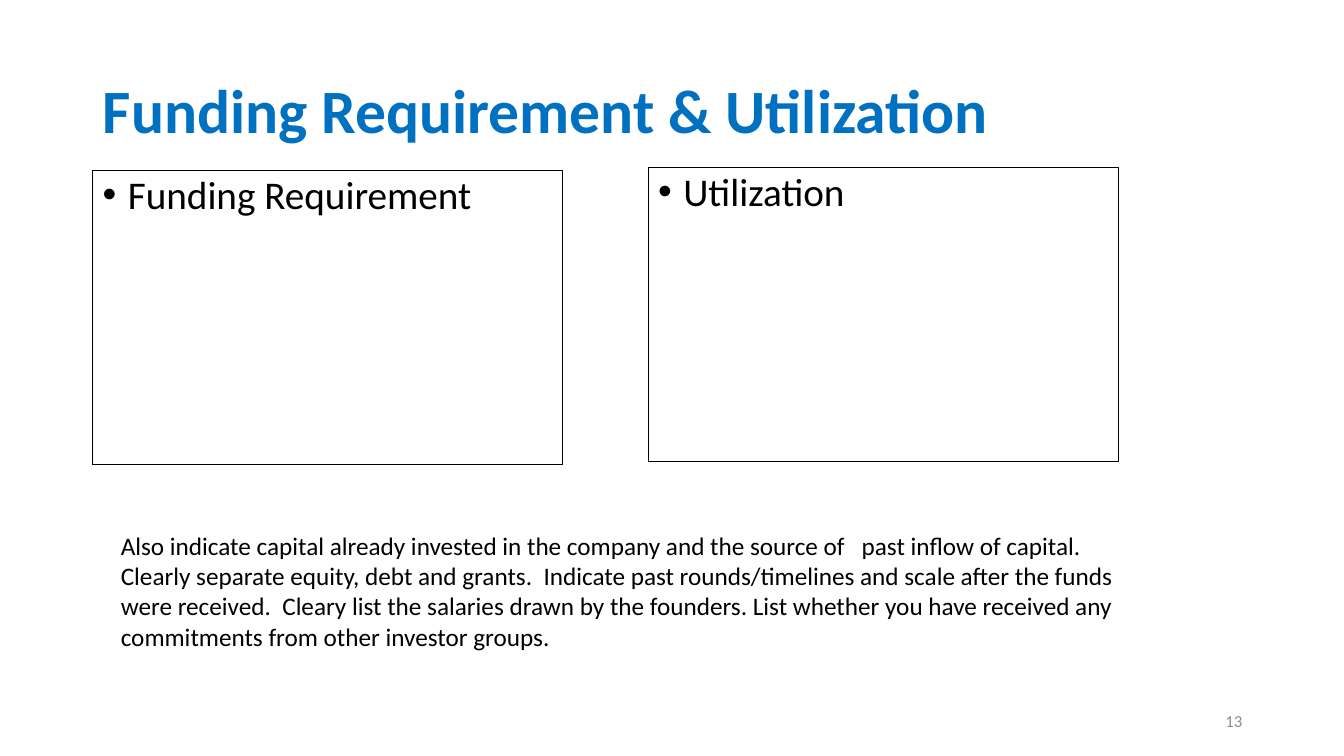
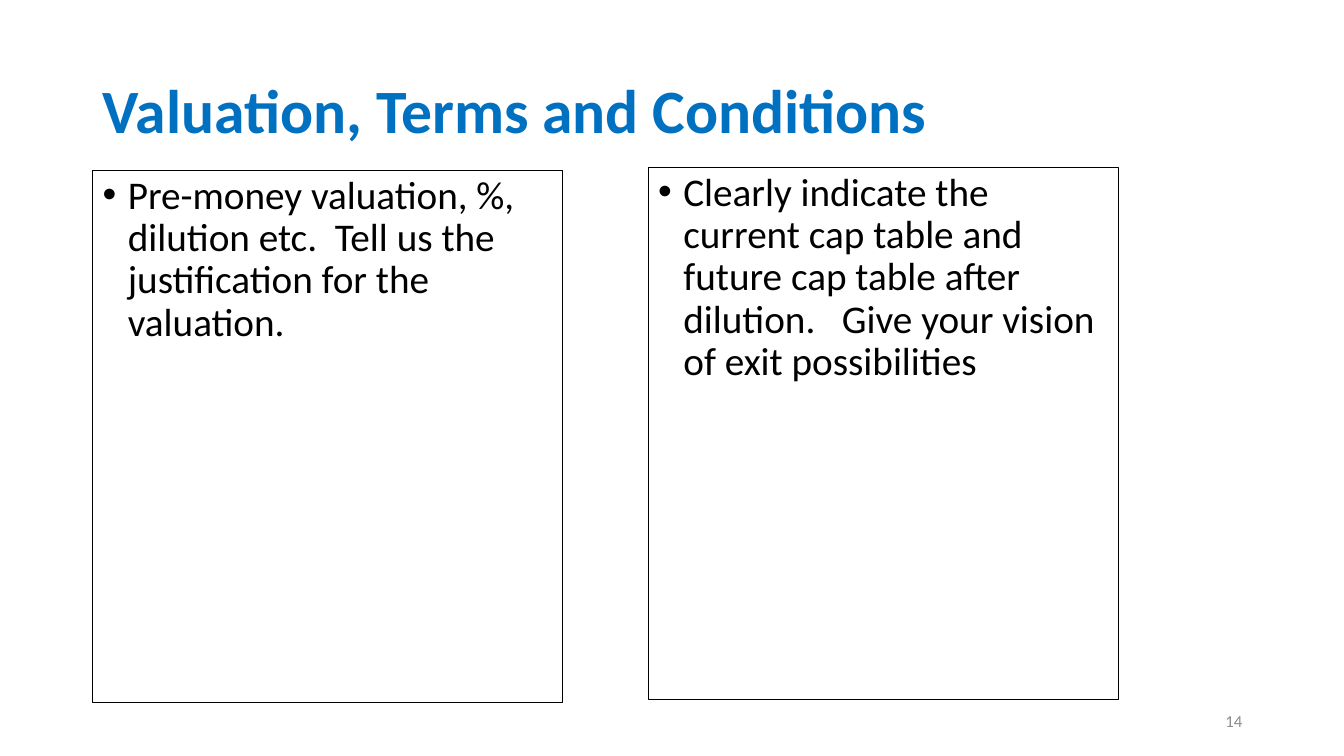
from pptx import Presentation
from pptx import util as u
from pptx.dml.color import RGBColor
from pptx.enum import shapes, text
from pptx.oxml.ns import qn

BLUE = RGBColor(0x00, 0x70, 0xC0)
BLACK = RGBColor(0x00, 0x00, 0x00)
GRAY = RGBColor(0x8C, 0x8C, 0x8C)
FONT = "Calibri"
W, H = 13.33, 7.5
MARGIN = 0.92
PANEL_W = 4.66
PANELS = ((MARGIN, 1.69), (6.43, 1.66))  # left and top of each panel
TITLE_ONLY = 5

CONTENT = (
    dict(number=13, title="Funding Requirement & Utilization", panel_h=2.92,
         panels=("Funding Requirement", "Utilization"),
         note="Also indicate capital already invested in the company and the source of   past "
              "inflow of capital.  Clearly separate equity, debt and grants.  Indicate past "
              "rounds/timelines and scale after the funds were received.  Cleary list the "
              "salaries drawn by the founders. List whether you have received any commitments "
              "from other investor groups."),
    dict(number=14, title="Valuation, Terms and Conditions", panel_h=5.28,
         panels=("Pre-money valuation, %, dilution etc.  Tell us the justification for the "
                 "valuation.",
                 "Clearly indicate the current cap table and future cap table after dilution.   "
                 "Give your vision of exit possibilities")),
)


def box(*lengths):
    return [u.Inches(n) for n in lengths]


def write(sp, words, size, color=BLACK, bold=False, align=text.PP_ALIGN.LEFT,
          anchor=text.MSO_ANCHOR.TOP, spacing=None, before=None):
    """Fill a shape with one formatted paragraph and return the paragraph."""
    tf = sp.text_frame
    tf.word_wrap = True
    tf.auto_size = text.MSO_AUTO_SIZE.NONE
    tf.vertical_anchor = anchor
    p = tf.paragraphs[0]
    p.alignment, p.line_spacing = align, spacing
    if before is not None:
        p.space_before = u.Pt(before)
    r = p.add_run()
    r.text = words
    r.font.name, r.font.size, r.font.bold = FONT, u.Pt(size), bold
    r.font.color.rgb = color
    return p


def add_bullet(p, indent=0.25):
    pPr = p._p.get_or_add_pPr()
    pPr.set("marL", str(u.Inches(indent)))
    pPr.set("indent", str(-u.Inches(indent)))
    pPr.append(pPr.makeelement(qn("a:buFont"), {"typeface": "Arial"}))
    pPr.append(pPr.makeelement(qn("a:buChar"), {"char": "•"}))


def add_title(s, words):
    sp = s.shapes.title
    sp.left, sp.top, sp.width, sp.height = box(MARGIN, 0.4, 11.5, 1.45)
    write(sp, words, 44, BLUE, bold=True, anchor=text.MSO_ANCHOR.MIDDLE, spacing=0.9)


def add_panel(s, words, left, top, height):
    sp = s.shapes.add_shape(shapes.MSO_SHAPE.RECTANGLE, *box(left, top, PANEL_W, height))
    sp.shadow.inherit = False
    sp.fill.background()
    sp.line.color.rgb = BLACK
    sp.line.width = u.Pt(0.75)
    add_bullet(write(sp, words, 28, spacing=0.9, before=10))


def add_text(s, words, at, size, **style):
    write(s.shapes.add_textbox(*box(*at)), words, size, **style)


def add_slide(prs, number, title, panels, panel_h, note=None):
    s = prs.slides.add_slide(prs.slide_layouts[TITLE_ONLY])
    add_title(s, title)
    for words, (left, top) in zip(panels, PANELS):
        add_panel(s, words, left, top, panel_h)
    add_text(s, str(number), (9.42, 6.95, 3, 0.4), 12, color=GRAY,
             align=text.PP_ALIGN.RIGHT, anchor=text.MSO_ANCHOR.MIDDLE)
    if note:
        add_text(s, note, (1.1, 5.21, 10.4, 1.31), 18)


def main():
    prs = Presentation()
    prs.slide_width, prs.slide_height = box(W, H)
    for slide in CONTENT:
        add_slide(prs, **slide)
    prs.save("out.pptx")


if __name__ == "__main__":
    main()
